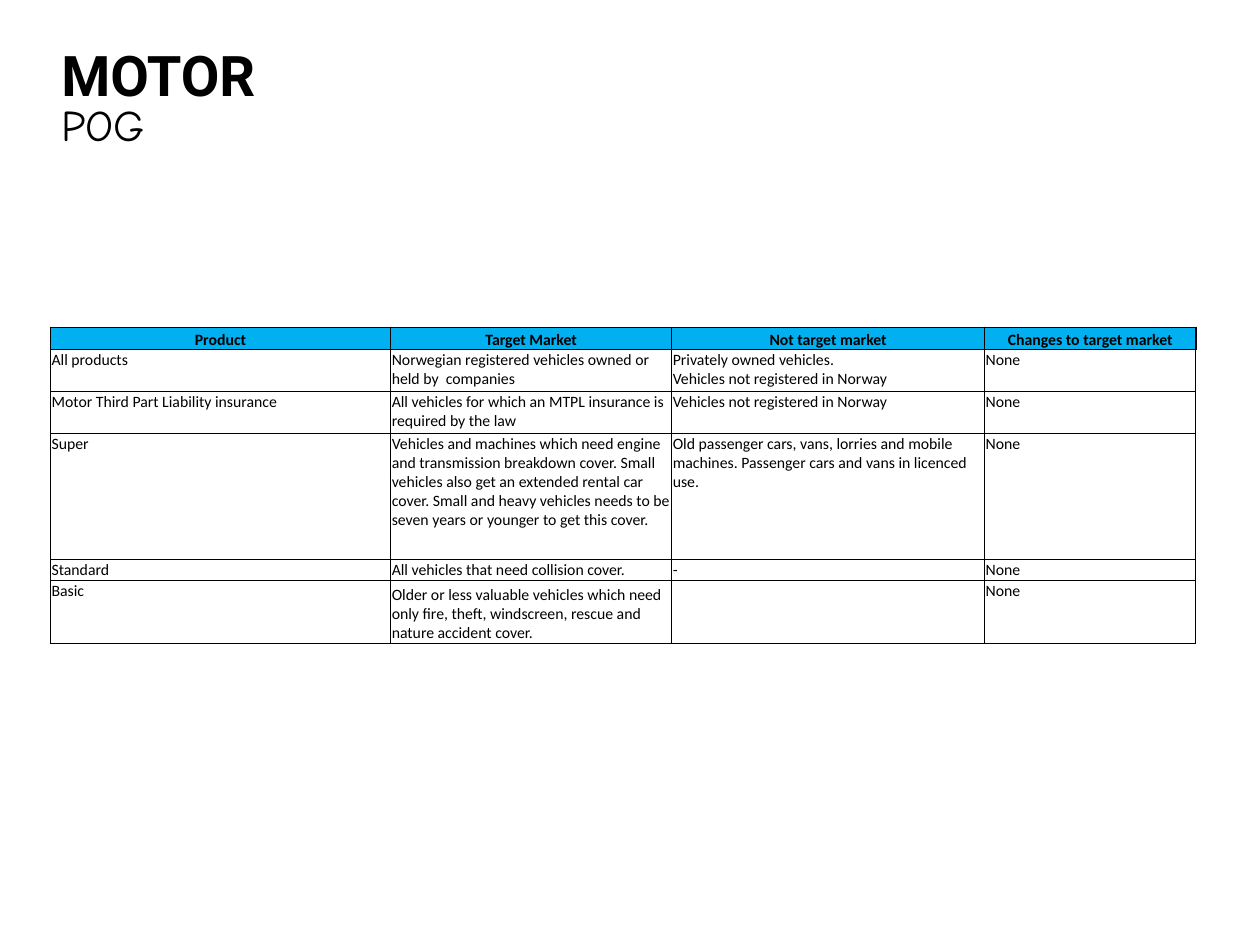
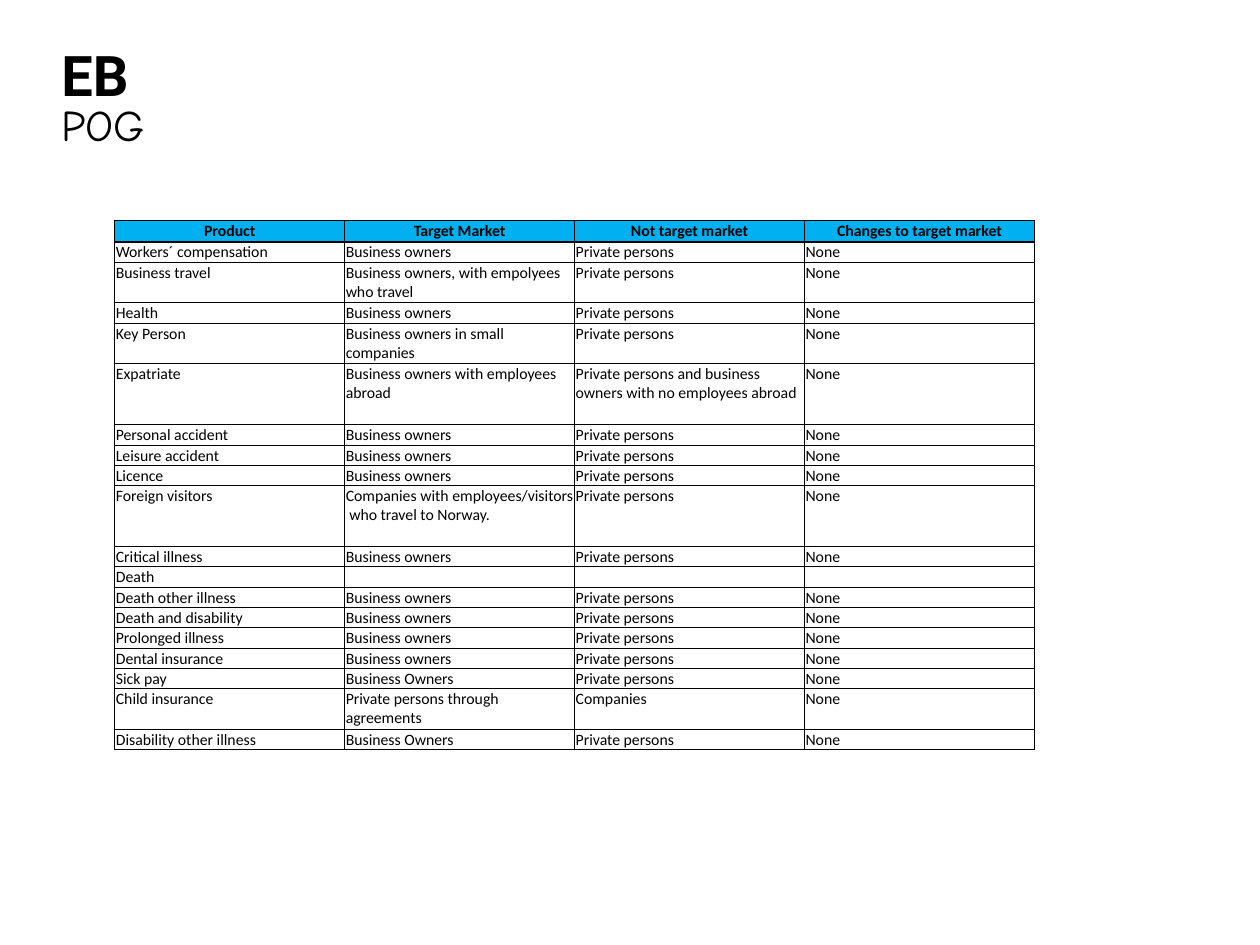
import pptx
import pptx.dml.color
import pptx.enum.text
import pptx.oxml.ns
import pptx.util
import lxml.etree

Pt = pptx.util.Pt
ANCHOR = pptx.enum.text.MSO_ANCHOR
ALIGN = pptx.enum.text.PP_ALIGN

BLACK = "000000"
HEADER_BLUE = "00B0F0"
THIN, THICK = 0.5, 1
SUBTITLE = "POG"
HEADINGS = ("Product", "Target Market", "Not target market", "Changes to target market")
OWNERS, PRIVATE, NONE = "Business owners", "Private persons", "None"
EB_LINE = 11.62


def standard(product, target=OWNERS, excluded=PRIVATE, lines=1):
    return lines * EB_LINE, (product, target, excluded, NONE)


MOTOR_ROWS = [
    (24, ("All products", "Norwegian registered vehicles owned or held by  companies",
          "Privately owned vehicles.\nVehicles not registered in Norway", NONE)),
    (24, ("Motor Third Part Liability insurance",
          "All vehicles for which an MTPL insurance is required by the law",
          "Vehicles not registered in Norway", NONE)),
    (72, ("Super",
          "Vehicles and machines which need engine and transmission breakdown cover. "
          "Small vehicles also get an extended rental car cover. Small and heavy vehicles "
          "needs to be seven years or younger to get this cover.",
          "Old passenger cars, vans, lorries and mobile machines. "
          "Passenger cars and vans in licenced use.", NONE)),
    (12, ("Standard", "All vehicles that need collision cover.", "-", NONE)),
    (36, ("Basic",
          "Older or less valuable vehicles which need only fire, theft, windscreen, "
          "rescue and nature accident cover.", "", NONE)),
]

EB_ROWS = [
    standard("Workers´ compensation"),
    standard("Business travel", "Business owners, with empolyees who travel", lines=2),
    standard("Health"),
    standard("Key Person", "Business owners in small companies", lines=2),
    standard("Expatriate", "Business owners with employees abroad",
             "Private persons and business owners with no employees abroad", lines=3),
    standard("Personal accident"),
    standard("Leisure accident"),
    standard("Licence"),
    standard("Foreign visitors", "Companies with employees/visitors  who travel to Norway.",
             lines=3),
    standard("Critical illness"),
    (EB_LINE, ("Death", "", "", "")),
    standard("Death other illness"),
    standard("Death and disability"),
    standard("Prolonged illness"),
    standard("Dental insurance"),
    standard("Sick pay", "Business Owners"),
    standard("Child insurance", "Private persons through agreements", "Companies", lines=2),
    standard("Disability other illness", "Business Owners"),
]

PAGES = [
    {"title": "MOTOR", "corner": (28.8, 187), "columns": (194.4, 160.6, 178.8, 120.8),
     "header": 12.6, "rows": MOTOR_ROWS, "bottom": [(0, c) for c in range(4)] + [(5, 1)]},
    {"title": "EB", "corner": (65.5, 126), "columns": (131.4,) * 4,
     "header": 12.2, "rows": EB_ROWS, "bottom": []},
]

TITLE = {"box": (28, 28.8, 657.5, 27.4),
         "frame": {"vertical_anchor": ANCHOR.MIDDLE},
         "font": {"name": "Roboto", "size": Pt(32), "bold": True}}
SUBHEAD = {"box": (28, 55.6, 657.5, 39.6),
           "frame": {"vertical_anchor": ANCHOR.TOP, "margin_top": 0},
           "font": {"name": "Comic Neue", "size": Pt(25), "bold": False}}
CELL_MARGINS = {"margin_left": Pt(0.7), "margin_top": Pt(0.7),
                "margin_right": Pt(0.7), "margin_bottom": 0}
CELL_FONT = {"name": "Calibri", "size": Pt(9)}


def colour(code):
    return pptx.dml.color.RGBColor.from_string(code)


def apply(target, values):
    for name, value in values.items():
        setattr(target, name, value)


def write(paragraph, text, font):
    paragraph.text = text
    for run in paragraph.runs:
        apply(run.font, font)
        run.font.color.rgb = colour(BLACK)


def add_heading(slide, text, style):
    frame = slide.shapes.add_textbox(*map(Pt, style["box"])).text_frame
    frame.word_wrap = True
    apply(frame, style["frame"])
    write(frame.paragraphs[0], text, style["font"])


def add_borders(cell, widths):
    properties = cell._tc.get_or_add_tcPr()
    qn = pptx.oxml.ns.qn
    for side in "LRTB":
        line = lxml.etree.SubElement(properties, qn(f"a:ln{side}"), w=str(Pt(widths[side])))
        solid = lxml.etree.SubElement(line, qn("a:solidFill"))
        lxml.etree.SubElement(solid, qn("a:srgbClr"), val=BLACK)


def fill_cell(cell, text, row, column, anchor):
    header = row == 0
    last = len(HEADINGS) - 1
    add_borders(cell, {
        "L": THICK if header and column == 0 else THIN,
        "R": THICK if header and column == last else THIN,
        "T": THICK if row <= 1 else THIN,
        "B": THICK if header else THIN,
    })
    if header:
        cell.fill.solid()
        cell.fill.fore_color.rgb = colour(HEADER_BLUE)
    else:
        cell.fill.background()
    apply(cell, CELL_MARGINS)
    cell.vertical_anchor = anchor
    paragraph = cell.text_frame.paragraphs[0]
    paragraph.alignment = ALIGN.CENTER if header else ALIGN.LEFT
    write(paragraph, text, {**CELL_FONT, "bold": header})
    if not text:
        lxml.etree.SubElement(paragraph._p, pptx.oxml.ns.qn("a:endParaRPr"), sz="900")


def add_market_table(slide, page):
    rows = [(page["header"], HEADINGS)] + page["rows"]
    size = sum(page["columns"]), sum(height for height, _ in rows)
    table = slide.shapes.add_table(
        len(rows), len(HEADINGS), *map(Pt, page["corner"] + size)).table
    apply(table, {"first_row": False, "horz_banding": False})
    for column, width in zip(table.columns, page["columns"]):
        column.width = Pt(width)
    for r, (height, texts) in enumerate(rows):
        table.rows[r].height = Pt(height)
        for c, text in enumerate(texts):
            anchor = ANCHOR.BOTTOM if (r, c) in page["bottom"] else ANCHOR.TOP
            fill_cell(table.cell(r, c), text, r, c, anchor)


def main():
    deck = pptx.Presentation()
    apply(deck, {"slide_width": Pt(720), "slide_height": Pt(540)})
    for page in PAGES:
        slide = deck.slides.add_slide(deck.slide_layouts[6])
        add_heading(slide, page["title"], TITLE)
        add_heading(slide, SUBTITLE, SUBHEAD)
        add_market_table(slide, page)
    deck.save("out.pptx")


if __name__ == "__main__":
    main()
